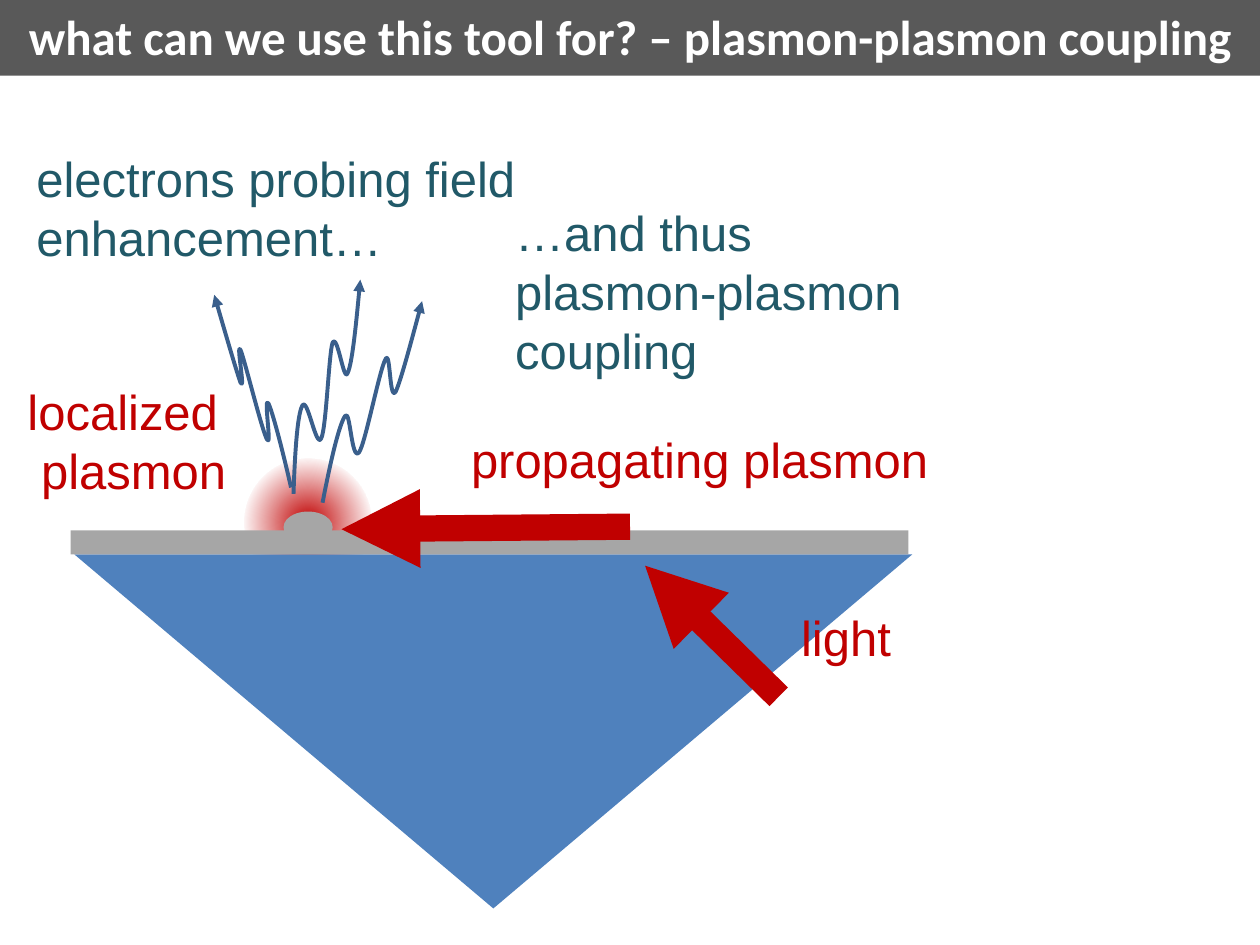
from lxml import etree
from pptx import Presentation
from pptx.dml.color import RGBColor
from pptx.enum.shapes import MSO_CONNECTOR, MSO_SHAPE
from pptx.enum.text import MSO_ANCHOR, PP_ALIGN
from pptx.oxml import parse_xml
from pptx.oxml.ns import nsdecls, qn
from pptx.util import Inches, Pt

RECT, OVAL = MSO_SHAPE.RECTANGLE, MSO_SHAPE.OVAL
TRIANGLE = MSO_SHAPE.ISOSCELES_TRIANGLE
STRAIGHT = MSO_CONNECTOR.STRAIGHT
MIDDLE, CENTER = MSO_ANCHOR.MIDDLE, PP_ALIGN.CENTER

COLORS = {
    "banner": "595959",
    "white": "FFFFFF",
    "plasmon": "C00000",
    "prism": "4F81BD",
    "metal": "A6A6A6",
    "electron": "3A5F8C",
    "caption": "215968",
}
LABEL = {"name": "Arial", "size": Pt(28)}
TITLE = {"name": "Calibri", "size": Pt(28), "bold": True}

ELECTRON_PATHS = [
    [(2.56, 3.99),
     (2.62, 3.68), (2.69, 3.37), (2.74, 3.3), (2.78, 3.24), (2.79, 3.67), (2.85, 3.59),
     (2.9, 3.52), (3.01, 2.94), (3.06, 2.85), (3.1, 2.77), (3.09, 3.19), (3.14, 3.11),
     (3.18, 3.03), (3.35, 2.39), (3.35, 2.39)],
    [(2.33, 3.92),
     (2.34, 3.61), (2.36, 3.29), (2.4, 3.22), (2.44, 3.14), (2.51, 3.57), (2.55, 3.48),
     (2.59, 3.4), (2.61, 2.81), (2.64, 2.72), (2.68, 2.64), (2.73, 3.05), (2.76, 2.96),
     (2.8, 2.88), (2.86, 2.22), (2.86, 2.22)],
    [(2.31, 3.87),
     (2.24, 3.56), (2.16, 3.26), (2.13, 3.2), (2.09, 3.14), (2.16, 3.56), (2.12, 3.49),
     (2.08, 3.42), (1.94, 2.85), (1.91, 2.78), (1.87, 2.7), (1.95, 3.11), (1.91, 3.04),
     (1.88, 2.96), (1.7, 2.34), (1.7, 2.34)],
]


def rgb(color):
    return RGBColor.from_string(COLORS[color])


def write(tf, lines, fmt, color, align=None):
    for i, line in enumerate(lines):
        p = tf.paragraphs[0] if i == 0 else tf.add_paragraph()
        p.alignment = align
        r = p.add_run()
        r.text = line
        for key, value in fmt.items():
            setattr(r.font, key, value)
        r.font.color.rgb = rgb(color)


def add_block(s, kind, x, y, w, h, color):
    sp = s.shapes.add_shape(kind, Inches(x), Inches(y), Inches(w), Inches(h))
    sp.shadow.inherit = False
    sp.fill.solid()
    sp.fill.fore_color.rgb = rgb(color)
    sp.line.fill.background()
    return sp


def add_title(s, text):
    tf = add_block(s, RECT, 0, -0.03, 10, 0.63, "banner").text_frame
    tf.word_wrap = True
    tf.vertical_anchor = MIDDLE
    write(tf, [text], TITLE, "white", CENTER)


def add_glow(s, x, y, size):
    sp = add_block(s, OVAL, x, y, size, size, "plasmon")
    stops = "".join(
        f'<a:gs pos="{pos}"><a:srgbClr val="{COLORS[color]}"/></a:gs>'
        for pos, color in [(0, "plasmon"), (74000, "white"), (100000, "white")])
    solid = sp._element.spPr.find(qn("a:solidFill"))
    solid.getparent().replace(solid, parse_xml(
        f'<a:gradFill {nsdecls("a")}><a:gsLst>{stops}</a:gsLst><a:path path="circle">'
        '<a:fillToRect l="50000" t="50000" r="50000" b="50000"/></a:path></a:gradFill>'))


def add_label(s, x, y, w, h, lines, color):
    tf = s.shapes.add_textbox(Inches(x), Inches(y), Inches(w), Inches(h)).text_frame
    tf.word_wrap = True
    write(tf, lines, LABEL, color)


def style_arrow(sp, color, width):
    sp.line.color.rgb = rgb(color)
    sp.line.width = Pt(width)
    etree.SubElement(sp.line._get_or_add_ln(), qn("a:tailEnd"), type="triangle")


def add_arrow(s, start, end):
    cx = s.shapes.add_connector(STRAIGHT, *map(Inches, start + end))
    style_arrow(cx, "plasmon", 15)
    etree.SubElement(cx._element.spPr, qn("a:effectLst"))


def add_electron(s, points):
    fb = s.shapes.build_freeform(*points[0], scale=Inches(1))
    fb = s.shapes.build_freeform(*map(Inches, points[0]))
    fb.add_line_segments([tuple(map(Inches, pt)) for pt in points[1:]], close=False)
    sp = fb.convert_to_shape()
    sp.shadow.inherit = False
    sp.fill.background()
    style_arrow(sp, "electron", 2.25)
    segments = list(sp._element.iter(qn("a:lnTo")))
    for i in range(0, len(segments), 3):
        curve = etree.SubElement(segments[i].getparent(), qn("a:cubicBezTo"))
        for segment in segments[i:i + 3]:
            curve.append(segment[0])
            segment.getparent().remove(segment)


def main():
    prs = Presentation()
    prs.slide_width, prs.slide_height = Inches(10), Inches(7.5)
    s = prs.slides.add_slide(prs.slide_layouts[6])

    add_title(s, "what can we use this tool for? – plasmon-plasmon coupling")
    add_glow(s, 1.94, 3.64, 1.01)
    add_label(s, 0.12, 2.98, 4.27, 1.04, ["localized", " plasmon"], "plasmon")

    add_block(s, TRIANGLE, 0.59, 4.4, 6.65, 2.81, "prism").rotation = 180
    add_block(s, RECT, 0.56, 4.21, 6.65, 0.19, "metal")
    add_block(s, OVAL, 2.25, 4.06, 0.39, 0.25, "metal")

    add_arrow(s, (6.18, 5.53), (5.12, 4.49))
    add_label(s, 6.26, 4.77, 1.27, 0.57, ["light"], "plasmon")
    add_arrow(s, (5, 4.18), (2.71, 4.2))
    add_label(s, 3.64, 3.36, 6.36, 0.57, ["propagating plasmon"], "plasmon")

    for points in ELECTRON_PATHS:
        add_electron(s, points)
    add_label(s, 0.19, 1.13, 4.27, 1.04,
              ["electrons probing field enhancement…"], "caption")
    add_label(s, 3.99, 1.56, 6.01, 1.51,
              ["…and thus", "plasmon-plasmon", "coupling"], "caption")

    prs.save("out.pptx")


if __name__ == "__main__":
    main()
